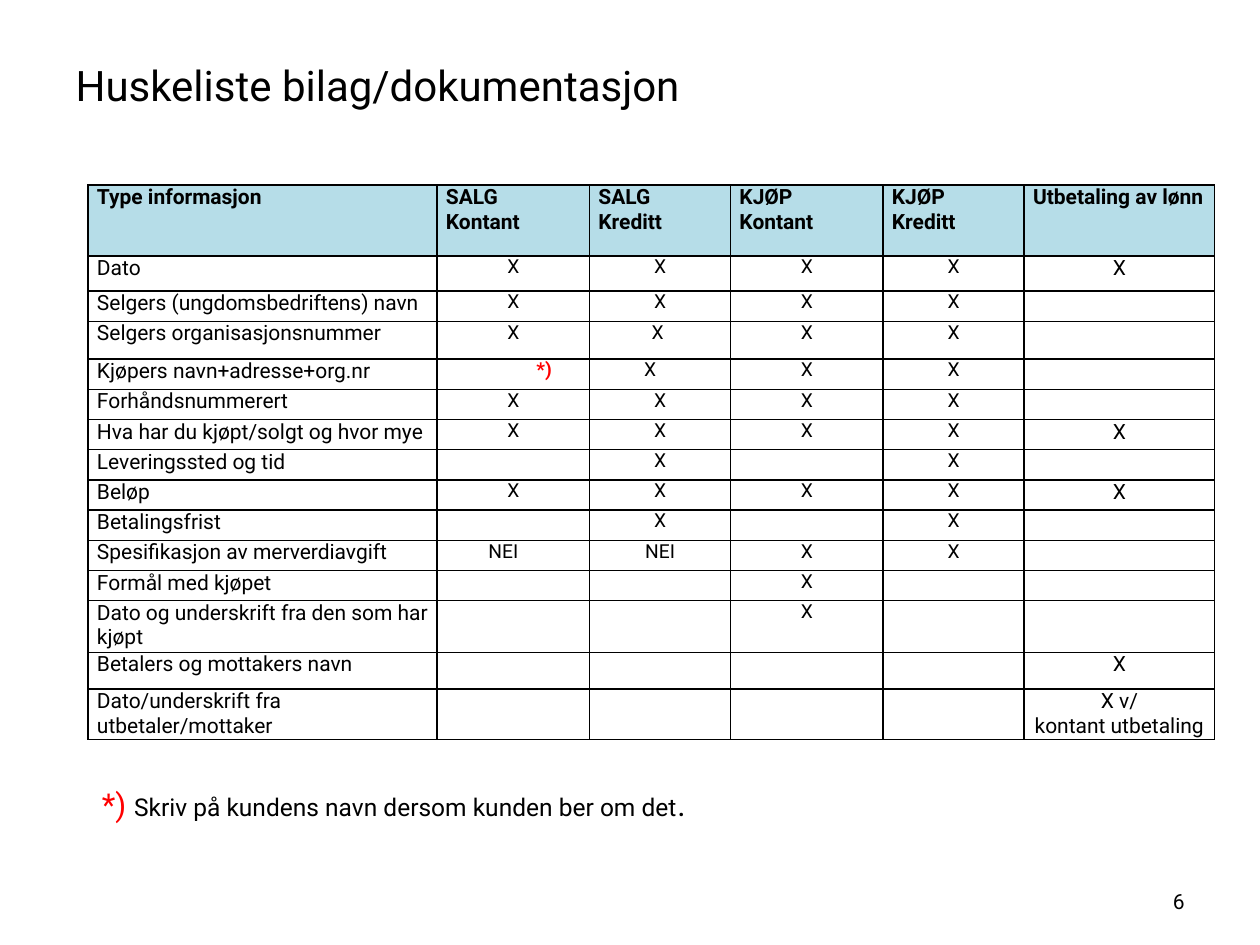
import pptx
import pptx.dml.color
import pptx.enum.text
import pptx.oxml
import pptx.oxml.ns
import pptx.util

WIDE, HIGH = 10, 7.5
FONT = "Roboto"
BLACK, RED, WHITE, BLUE = "000000", "FF0000", "FFFFFF", "B6DDE8"
ALIGN = pptx.enum.text.PP_ALIGN
MIDDLE = pptx.enum.text.MSO_ANCHOR.MIDDLE

# Relative widths of columns and heights of rows
COLS = [2.77, 1.21, 1.12, 1.21, 1.12, 1.51]
ROWS = [0.56, 0.28, 0.24, 0.3] + [0.24] * 8 + [0.41, 0.29, 0.4]
HEADS = ["Type informasjon", "SALG\nKontant", "SALG\nKreditt",
         "KJØP\nKontant", "KJØP\nKreditt", "Utbetaling av lønn"]
ITEMS = [
    ["Dato", "X", "X", "X", "X", "X"],
    ["Selgers (ungdomsbedriftens) navn", "X", "X", "X", "X", ""],
    ["Selgers organisasjonsnummer", "X", "X", "X", "X", ""],
    ["Kjøpers navn+adresse+org.nr", "*)", "X", "X", "X", ""],
    ["Forhåndsnummerert", "X", "X", "X", "X", ""],
    ["Hva har du kjøpt/solgt og hvor mye", "X", "X", "X", "X", "X"],
    ["Leveringssted og tid", "", "X", "", "X", ""],
    ["Beløp", "X", "X", "X", "X", "X"],
    ["Betalingsfrist", "", "X", "", "X", ""],
    ["Spesifikasjon av merverdiavgift", "NEI", "NEI", "X", "X", ""],
    ["Formål med kjøpet", "", "", "X", "", ""],
    ["Dato og underskrift fra den som har kjøpt", "", "", "X", "", ""],
    ["Betalers og mottakers navn", "", "", "", "", "X"],
    ["Dato/underskrift fra utbetaler/mottaker", "", "", "", "",
     "X v/\nkontant utbetaling"],
]
# Extra left and right insets of marks that stand off centre: (row, column)
SHIFTS = {(3, 2): (0, 0.04), (4, 1): (0.49, 0), (4, 2): (0, 0.16),
          (10, 1): (0, 0.16)}


def color(code):
    return pptx.dml.color.RGBColor.from_string(code)


def area(left, top, width, height):
    """Turn percentages of the slide into lengths."""
    return [pptx.util.Inches(part * full / 100) for part, full in
            zip((left, top, width, height), (WIDE, HIGH, WIDE, HIGH))]


def style(font, size, code=BLACK, bold=False):
    font.name, font.size, font.bold = FONT, pptx.util.Pt(size), bold
    font.color.rgb = color(code)


def add_title(slide, box):
    title = slide.shapes.title
    title.left, title.top, title.width, title.height = box
    title.text_frame.text = "Huskeliste bilag/dokumentasjon"
    title.text_frame.vertical_anchor = MIDDLE
    para = title.text_frame.paragraphs[0]
    para.alignment = ALIGN.LEFT
    style(para.font, 24)


def add_lines(cell):
    """Draw a thin black border on all four sides."""
    space = pptx.oxml.ns.nsdecls("a")
    props = cell._tc.get_or_add_tcPr()
    for spot, side in enumerate("LRTB"):
        props.insert(spot, pptx.oxml.parse_xml(
            f'<a:ln{side} {space} w="12700"><a:solidFill>'
            f'<a:srgbClr val="{BLACK}"/></a:solidFill></a:ln{side}>'))


def fill_cell(cell, text, row, col):
    left, right = SHIFTS.get((row, col), (0, 0))
    cell.margin_left = pptx.util.Inches(0.07 + left)
    cell.margin_right = pptx.util.Inches(0.07 + right)
    cell.margin_top = cell.margin_bottom = 0
    cell.fill.solid()
    cell.fill.fore_color.rgb = color(WHITE if row else BLUE)
    add_lines(cell)
    cell.text = text
    note = text == "*)"
    size = 11 if row and 0 < col < len(COLS) - 1 else 12
    for para in cell.text_frame.paragraphs:
        if row and col:
            para.alignment = ALIGN.CENTER
        elif row:
            para.space_after = pptx.util.Pt(6)
        style(para.font, size, RED if note else BLACK, note or not row)
        if not text:
            # An empty cell takes its line height from the end mark
            end = pptx.oxml.parse_xml(
                f'<a:endParaRPr {pptx.oxml.ns.nsdecls("a")} '
                f'sz="{size * 100}"/>')
            para._p.append(end)


def add_grid(slide, box):
    grid = slide.shapes.add_table(len(ROWS), len(COLS), *box).table
    grid.first_row = grid.horz_banding = False
    for col, share in zip(grid.columns, COLS):
        col.width = int(box[2] * share / sum(COLS))
    for row, share in zip(grid.rows, ROWS):
        row.height = int(box[3] * share / sum(ROWS))
    for row, texts in enumerate([HEADS] + ITEMS):
        for col, text in enumerate(texts):
            fill_cell(grid.cell(row, col), text, row, col)


def add_note(slide, box):
    frame = slide.shapes.add_textbox(*box).text_frame
    frame.word_wrap = True
    parts = [("*) ", 18, RED),
             ("Skriv på kundens navn dersom kunden ber om det", 14, BLACK),
             (".", 18, BLACK)]
    for text, size, code in parts:
        run = frame.paragraphs[0].add_run()
        run.text = text
        style(run.font, size, code)


def add_number(slide, box):
    frame = slide.shapes.add_textbox(*box).text_frame
    frame.word_wrap = True
    frame.vertical_anchor = MIDDLE
    frame.text = "6"
    para = frame.paragraphs[0]
    para.alignment = ALIGN.RIGHT
    style(para.font, 12)


def main():
    deck = pptx.Presentation()
    deck.slide_width = pptx.util.Inches(WIDE)
    deck.slide_height = pptx.util.Inches(HIGH)
    slide = deck.slides.add_slide(deck.slide_layouts.get_by_name("Title Only"))
    add_title(slide, area(5, 2.4, 65.3, 13.07))
    add_grid(slide, area(7, 19.6, 89.4, 58.67))
    add_number(slide, area(71.7, 92.67, 23.3, 5.33))
    add_note(slide, area(7.1, 82.4, 86.3, 5.33))
    deck.save("out.pptx")


if __name__ == "__main__":
    main()
